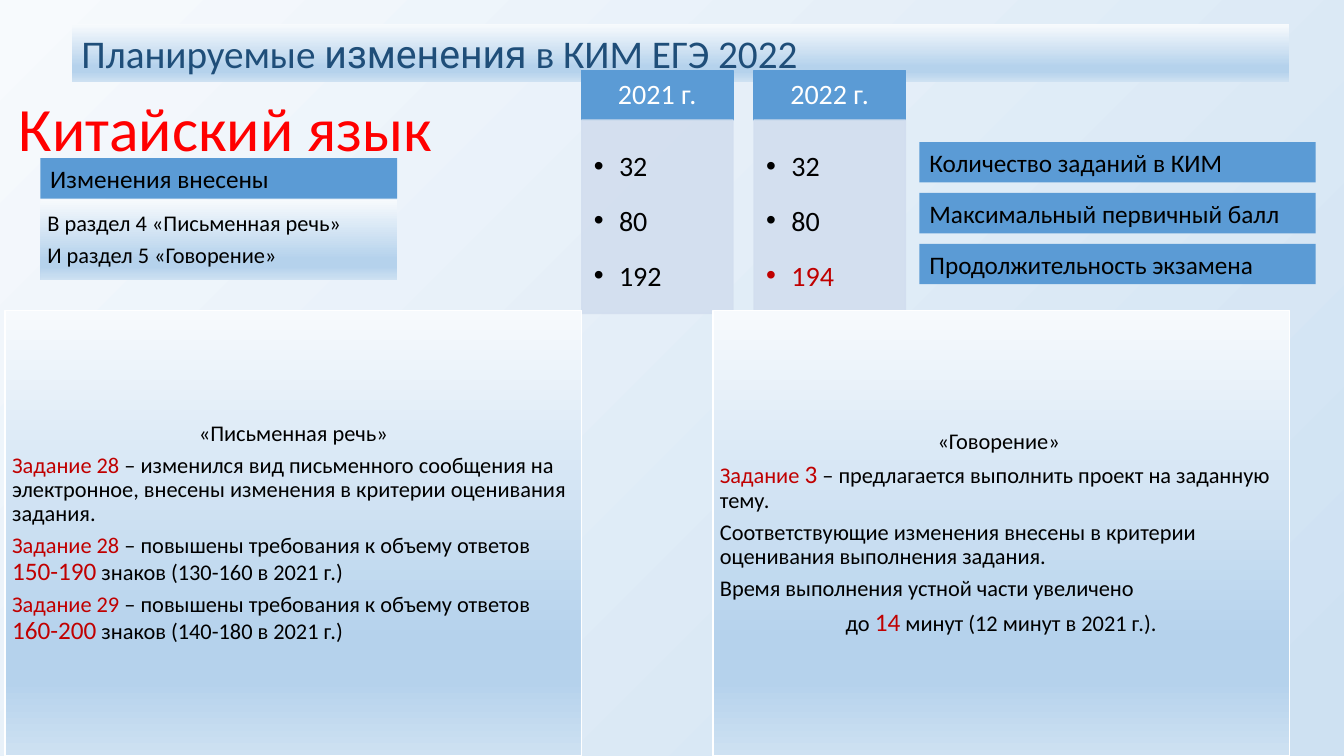
from lxml import etree
from pptx import Presentation
from pptx.dml.color import RGBColor
from pptx.enum.shapes import MSO_SHAPE
from pptx.enum.text import MSO_ANCHOR, PP_ALIGN
from pptx.oxml.ns import qn
from pptx.util import Inches, Pt

# Content: a paragraph is a list of (text, format) spans
RED = {"color": "C00000"}
BIG_RED = {"color": "C00000", "size": 18}
CENTER = PP_ALIGN.CENTER
LEFT = PP_ALIGN.LEFT

HEADING = [[("Планируемые ", {}), ("изменения", {"font": "Roboto"}), (" в КИМ ЕГЭ 2022", {})]]
SUBJECT = [[("Китайский язык", {})]]
CHANGES_LABEL = [[("Изменения внесены", {})]]
CHANGED_SECTIONS = [[("В раздел 4 «Письменная речь»", {})], [("И раздел 5 «Говорение»", {})]]
MEASURES = ["Количество заданий в КИМ", "Максимальный первичный балл", "Продолжительность экзамена"]
YEARS = [
    ("2021 г.", [("32", {}), ("80", {}), ("192", {})]),
    ("2022 г.", [("32", {}), ("80", {}), ("194", RED)]),
]
WRITING = [
    [("«Письменная речь»", {})],
    [("Задание 28 ", RED),
     ("– изменился вид письменного сообщения на электронное, "
      "внесены изменения в критерии оценивания задания.", {})],
    [("Задание 28 ", RED), ("– повышены требования к объему ответов ", {}),
     ("150-190", BIG_RED), (" знаков (130-160 в 2021 г.)", {})],
    [("Задание 29 ", RED), ("– повышены требования к объему ответов ", {}),
     ("160-200", BIG_RED), (" знаков (140-180 в 2021 г.)", {})],
]
SPEAKING = [
    [("«Говорение» ", {})],
    [("Задание ", RED), ("3", BIG_RED), (" ", RED),
     ("– предлагается выполнить проект на заданную тему.", {})],
    [("Соответствующие изменения внесены в критерии оценивания выполнения задания.", {})],
    [("Время выполнения устной части увеличено", {})],
    [("до ", {}), ("14", BIG_RED), (" минут (12 минут в 2021 г.).", {})],
]
PANELS = [(0.05, WRITING, [0]), (7.07, SPEAKING, [0, 4])]

BLUE = "5B9BD5"
PALE = "D2DEEF"
PAGE_STOPS = [(0, "F7FAFD"), (97, "CEE1F2")]
BOX_STOPS = [(0, "F7FAFD"), (74, "B5D2EC"), (83, "B5D2EC"), (100, "CEE1F2")]


def rgb(value):
    return RGBColor.from_string(value)


def set_gradient(fill, holder, stops, angle):
    fill.gradient()
    fill.gradient_angle = 360 - angle
    stop_list = next(holder.iter(qn("a:gsLst")))
    for stop in list(stop_list):
        stop_list.remove(stop)
    for position, color in stops:
        stop = etree.SubElement(stop_list, qn("a:gs"), pos=str(position * 1000))
        etree.SubElement(stop, qn("a:srgbClr"), val=color)


def add_box(page, left, top, width, height, fill=None, line=None, alpha=None):
    """Add a rectangle; fill is a colour or a list of gradient stops."""
    box = page.shapes.add_shape(MSO_SHAPE.RECTANGLE, Inches(left), Inches(top),
                                Inches(width), Inches(height))
    box.shadow.inherit = False
    if isinstance(fill, list):
        set_gradient(box.fill, box.element, fill, 90)
    else:
        box.fill.solid()
        box.fill.fore_color.rgb = rgb(fill)
    if line:
        box.line.color.rgb = rgb(line)
        box.line.width = Pt(1)
    else:
        box.line.fill.background()
    if alpha:
        for color in box.element.spPr.iter(qn("a:srgbClr")):
            etree.SubElement(color, qn("a:alpha"), val=str(alpha * 1000))
    return box


def write(box, paragraphs, size=18, color="000000", font="Calibri", centered=(),
          anchor=MSO_ANCHOR.TOP, insets=(0.1, 0.05, 0.1, 0.05), spacing=1.0,
          after=0, bullet=False):
    frame = box.text_frame
    frame.word_wrap = True
    frame.vertical_anchor = anchor
    (frame.margin_left, frame.margin_top,
     frame.margin_right, frame.margin_bottom) = map(Inches, insets)
    for index, spans in enumerate(paragraphs):
        para = frame.add_paragraph() if index else frame.paragraphs[0]
        para.alignment = CENTER if index in centered else LEFT
        para.line_spacing = spacing
        para.space_after = Pt(after)
        if bullet:
            properties = para._p.get_or_add_pPr()
            properties.set("marL", str(Inches(0.25)))
            properties.set("indent", str(-Inches(0.25)))
            etree.SubElement(properties, qn("a:buFont"), typeface="Arial")
            etree.SubElement(properties, qn("a:buChar"), char="•")
        for text, style in spans:
            span = para.add_run()
            span.text = text
            span.font.name = style.get("font", font)
            span.font.size = Pt(style.get("size", size))
            span.font.color.rgb = rgb(style.get("color", color))


def main():
    deck = Presentation()
    deck.slide_width, deck.slide_height = Inches(13.33), Inches(7.5)
    page = deck.slides.add_slide(deck.slide_layouts[6])
    set_gradient(page.background.fill, page.element, PAGE_STOPS, 45)

    # Subject and heading band
    subject = page.shapes.add_textbox(Inches(0.09), Inches(0.91), Inches(4.73), Inches(0.79))
    write(subject, SUBJECT, size=44, color="FF0000", anchor=MSO_ANCHOR.MIDDLE, spacing=0.9)
    heading = add_box(page, 0.71, 0.24, 12.08, 0.57, BOX_STOPS)
    write(heading, HEADING, size=28, color="1F4E79")

    # Names of the measures, right of the year columns
    for row, measure in enumerate(MEASURES):
        label = add_box(page, 9.12, 1.41 + row * 0.505, 3.93, 0.4, BLUE)
        write(label, [[(measure, {})]])

    # Year columns
    for column, (year, values) in enumerate(YEARS):
        left = 5.77 + column * 1.71
        header = add_box(page, left, 0.7, 1.5, 0.49, BLUE, line=BLUE)
        write(header, [[(year, {})]], size=20, color="FFFFFF", centered=[0],
              anchor=MSO_ANCHOR.MIDDLE, insets=(0.16, 0.09, 0.16, 0.09), spacing=0.9)
        body = add_box(page, left, 1.19, 1.5, 1.92, PALE, line=PALE, alpha=90)
        write(body, [[value] for value in values], size=20,
              insets=(0.12, 0.12, 0.16, 0.17), spacing=1.5, after=3, bullet=True)

    # Changed sections and the two detail panels
    write(add_box(page, 0.4, 1.57, 3.54, 0.4, BLUE), CHANGES_LABEL)
    detail = {"size": 16, "anchor": MSO_ANCHOR.MIDDLE, "insets": (0.07,) * 4,
              "spacing": 0.9, "after": 5.6}
    write(add_box(page, 0.4, 1.98, 3.54, 0.8, BOX_STOPS), CHANGED_SECTIONS, **detail)
    for left, paragraphs, centered in PANELS:
        panel = add_box(page, left, 3.08, 5.72, 4.42, BOX_STOPS, line="FFFFFF")
        write(panel, paragraphs, centered=centered, **detail)

    deck.save("out.pptx")


if __name__ == "__main__":
    main()
